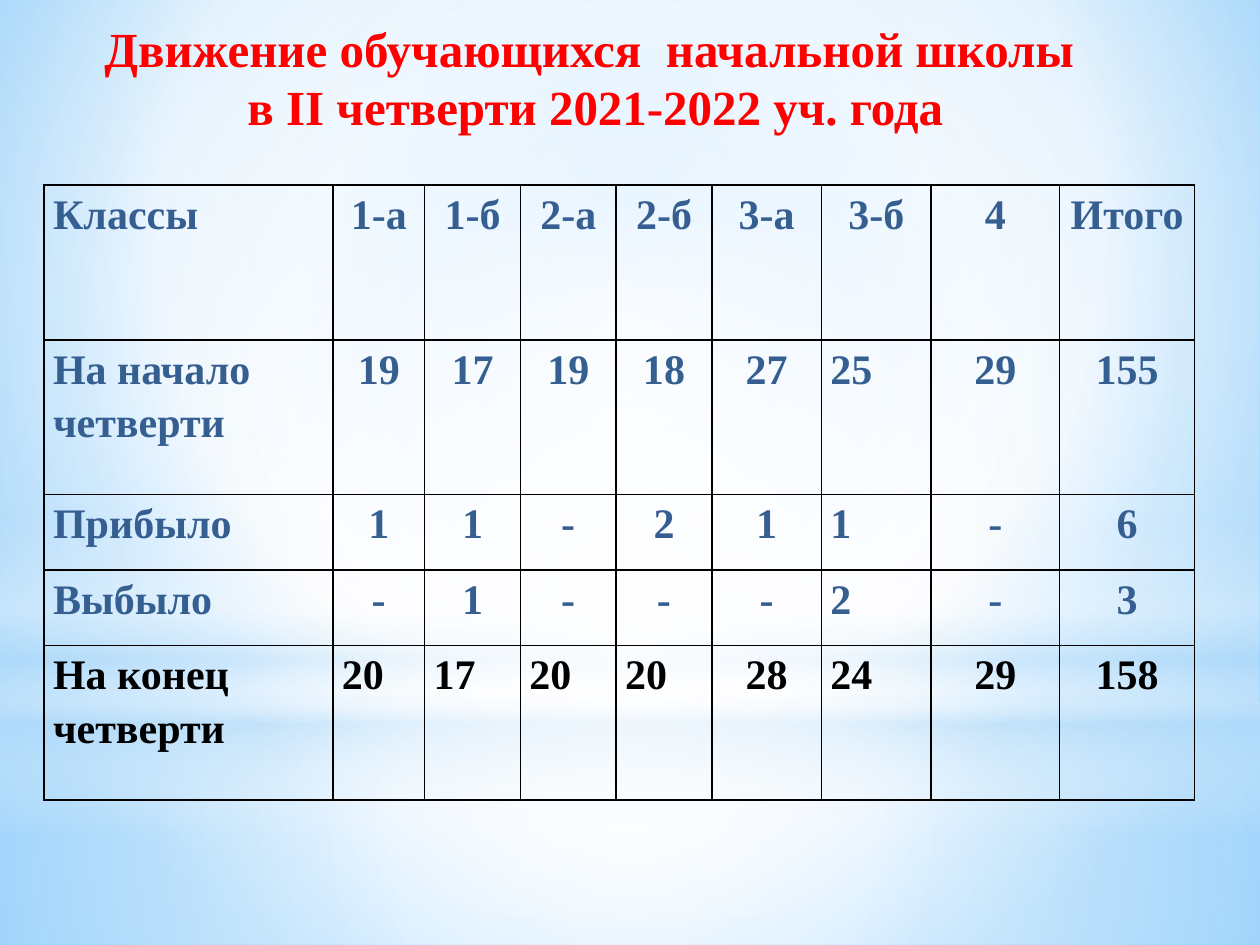
"""Build a slide with the pupil movement table of a primary school."""
from lxml.etree import SubElement
from pptx import Presentation
from pptx.dml.color import RGBColor
from pptx.enum.shapes import MSO_SHAPE
from pptx.enum.text import MSO_ANCHOR, MSO_AUTO_SIZE, PP_ALIGN
from pptx.oxml import parse_xml
from pptx.oxml.ns import nsdecls, qn
from pptx.util import Cm, Pt

FONT = "Times New Roman"
COLORS = {"title": "FF0000", "body": "365F91", "total": "000000", "line": "000000",
          "white": "FFFFFF", "pale": "B4DCFA", "sky": "9ED5FF", "deep": "5BB9FF"}
TITLE = ["Движение обучающихся  начальной школы ", "в II четверти 2021-2022 уч. года"]
ROWS = [
    ["Классы", "1-а", "1-б", "2-а", "2-б", "3-а", "3-б", "4", "Итого"],
    ["На начало четверти", "19", "17", "19", "18", "27", "25", "29", "155"],
    ["Прибыло", "1", "1", "-", "2", "1", "1", "-", "6"],
    ["Выбыло", "-", "1", "-", "-", "-", "2", "-", "3"],
    ["На конец четверти", "20", "17", "20", "20", "28", "24", "29", "158"],
]
LEFT = [{0}, {0, 6}, {0, 6}, {0, 6}, {0, 1, 2, 3, 4, 6}]
WIDTHS = [5.82, 1.85, 1.93, 1.93, 1.93, 2.21, 2.21, 2.59, 2.72]
HEIGHTS = [3.12, 3.12, 1.52, 1.52, 3.12]
BACK = ([(0, "sky", 100), (60, "white", 100), (100, "deep", 100)], (20, 10, 20, 60))
MID = (50, 50, 50, 50)
GLOWS = [
    (MSO_SHAPE.RECTANGLE, 14.17, 4.88,
     [(0, "white", 91), (37, "white", 76), (100, "pale", 79)], MID),
    (MSO_SHAPE.RECTANGLE, 0, 14.17,
     [(0, "white", 89), (48, "white", 62), (100, "pale", 79)], MID),
    (MSO_SHAPE.RECTANGLE, 10.46, 6.35,
     [(0, "white", 0), (29, "white", 30), (45, "pale", 40),
      (55, "white", 26), (65, "pale", 60), (100, "white", 0)], None),
    (MSO_SHAPE.OVAL, 4.45, 14.17, [(0, "white", 100), (56, "white", 0)], MID),
]


def shade(fill, root, stops, focus):
    fill.gradient()
    old = next(root.iter(qn("a:gradFill")))
    marks = "".join(
        f'<a:gs pos="{pos * 1000}"><a:srgbClr val="{COLORS[name]}">'
        f'<a:alpha val="{alpha * 1000}"/></a:srgbClr></a:gs>'
        for pos, name, alpha in stops)
    if focus:
        sides = " ".join(f'{side}="{part * 1000}"' for side, part in zip("ltrb", focus))
        way = f'<a:path path="circle"><a:fillToRect {sides}/></a:path>'
    else:
        way = '<a:lin ang="5400000" scaled="0"/>'
    old.getparent().replace(old, parse_xml(
        f'<a:gradFill {nsdecls("a")} rotWithShape="1"><a:gsLst>{marks}</a:gsLst>{way}</a:gradFill>'))


def style(para, size, color, align):
    para.alignment = align
    for run in para.runs:
        run.font.name, run.font.size, run.font.bold = FONT, Pt(size), True
        run.font.color.rgb = RGBColor.from_string(COLORS[color])


def border(cell):
    props = cell._tc.get_or_add_tcPr()
    for side in ("lnL", "lnR", "lnT", "lnB"):
        line = SubElement(props, qn(f"a:{side}"), w=str(Pt(1)))
        SubElement(SubElement(line, qn("a:solidFill")), qn("a:srgbClr"), val=COLORS["line"])
    SubElement(props, qn("a:noFill"))


def add_glows(slide, width):
    back = slide.background.fill
    shade(back, slide.element, *BACK)
    for kind, top, height, stops, focus in GLOWS:
        glow = slide.shapes.add_shape(kind, 0, Cm(top), width, Cm(height))
        glow.shadow.inherit = False
        glow.line.fill.background()
        shade(glow.fill, glow.element, stops, focus)


def add_title(slide):
    frame = slide.shapes.add_textbox(Cm(1.75), Cm(0.23), Cm(20.5), Cm(2.64)).text_frame
    frame.word_wrap = False
    frame.auto_size = MSO_AUTO_SIZE.SHAPE_TO_FIT_TEXT
    frame.vertical_anchor = MSO_ANCHOR.MIDDLE
    frame.text = "\n".join(TITLE)
    for para in frame.paragraphs:
        style(para, 28, "title", PP_ALIGN.CENTER)


def add_grid(slide):
    table = slide.shapes.add_table(len(ROWS), len(WIDTHS), Cm(0.89), Cm(3.73),
                                   Cm(sum(WIDTHS)), Cm(sum(HEIGHTS))).table
    table.first_row = table.horz_banding = False
    for col, width in zip(table.columns, WIDTHS):
        col.width = Cm(width)
    for r, (row, height) in enumerate(zip(ROWS, HEIGHTS)):
        table.rows[r].height = Cm(height)
        color = "total" if r == len(ROWS) - 1 else "body"
        for c, text in enumerate(row):
            cell = table.cell(r, c)
            cell.margin_left = cell.margin_right = Cm(0.18)
            cell.margin_top = cell.margin_bottom = 0
            cell.text_frame.text = text
            para = cell.text_frame.paragraphs[0]
            para.line_spacing = 1.15
            style(para, 24, color, PP_ALIGN.LEFT if c in LEFT[r] else PP_ALIGN.CENTER)
            border(cell)


def main():
    deck = Presentation()
    deck.slide_width, deck.slide_height = Cm(25.4), Cm(19.05)
    slide = deck.slides.add_slide(deck.slide_layouts[6])
    add_glows(slide, deck.slide_width)
    add_title(slide)
    add_grid(slide)
    deck.save("out.pptx")


if __name__ == "__main__":
    main()
